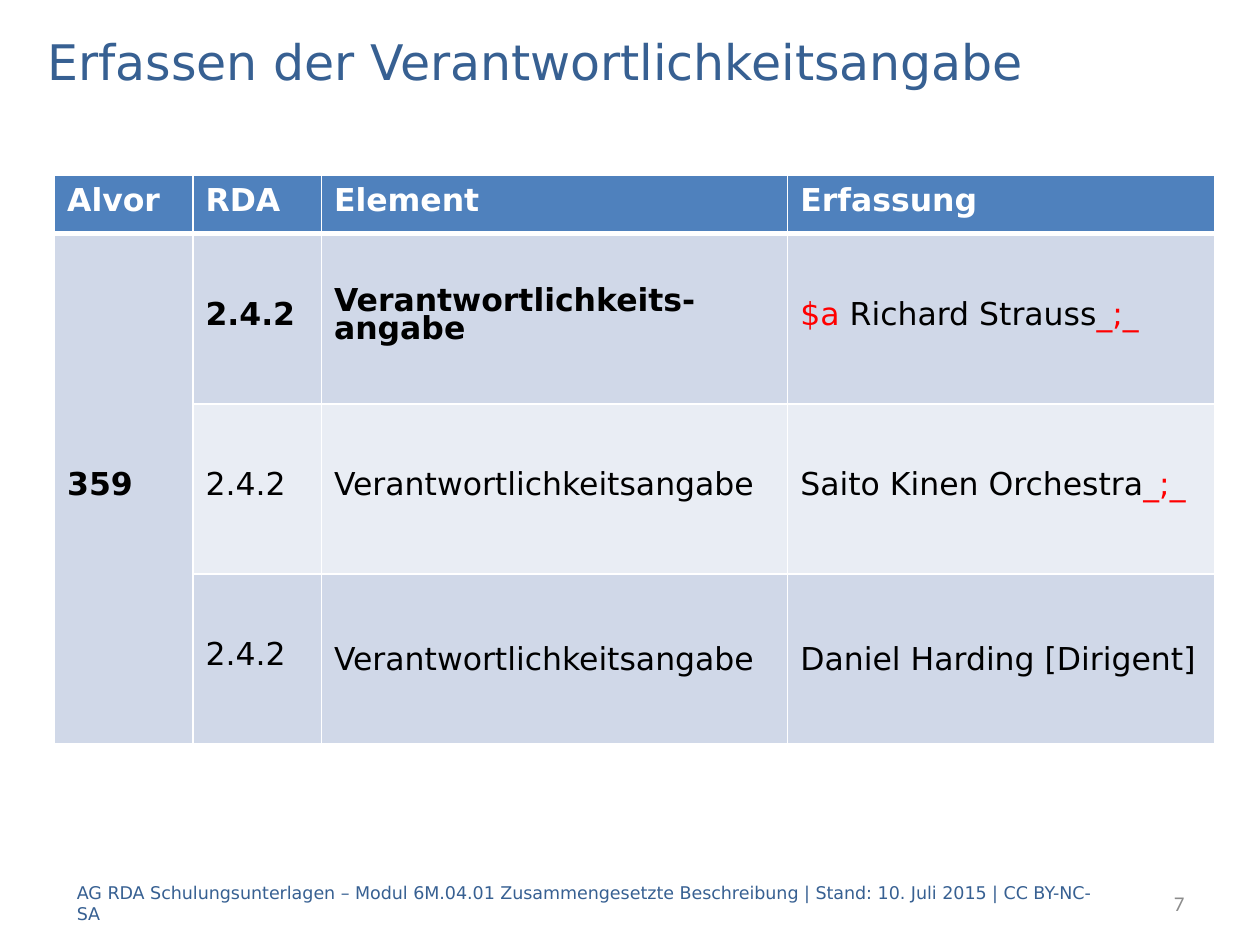
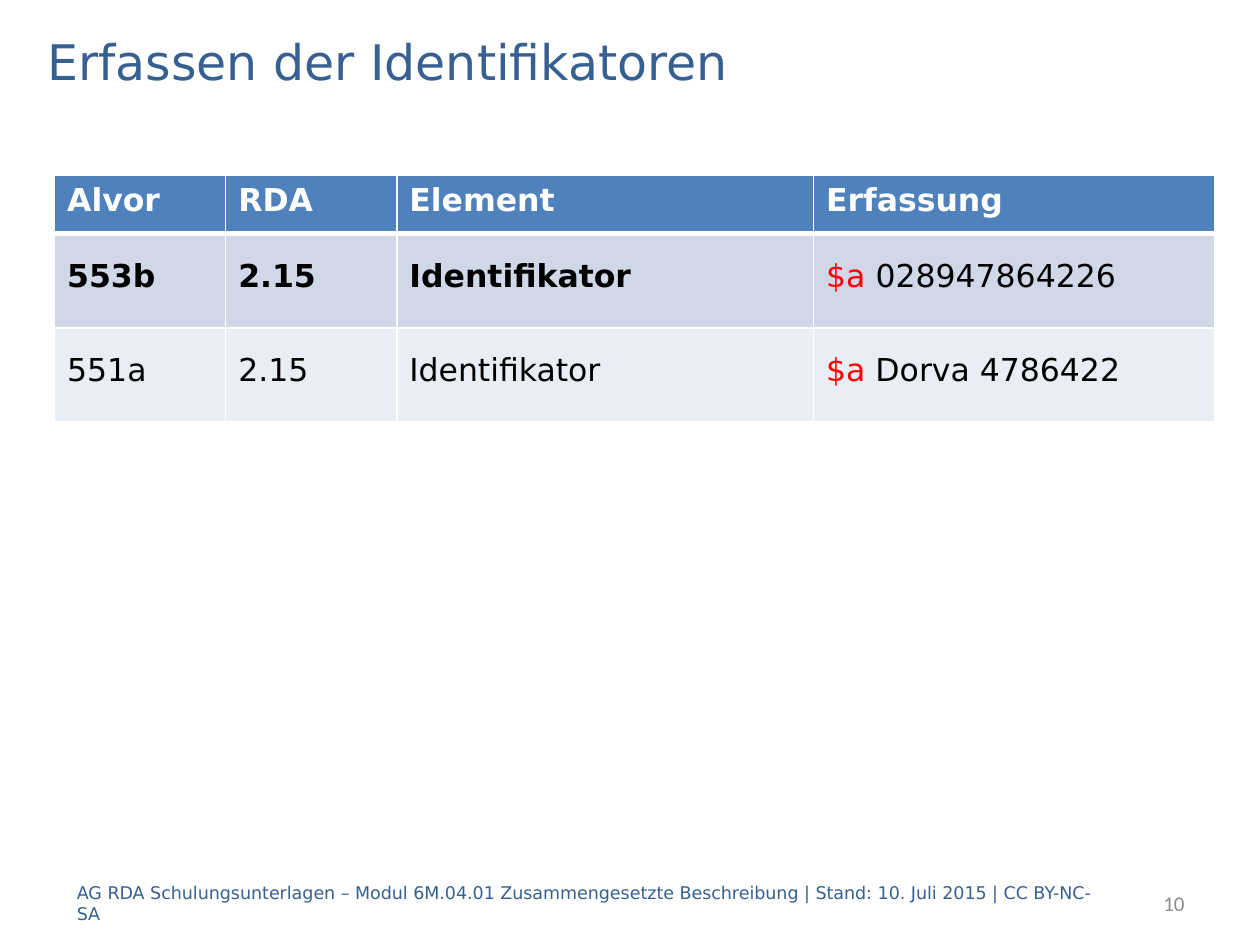
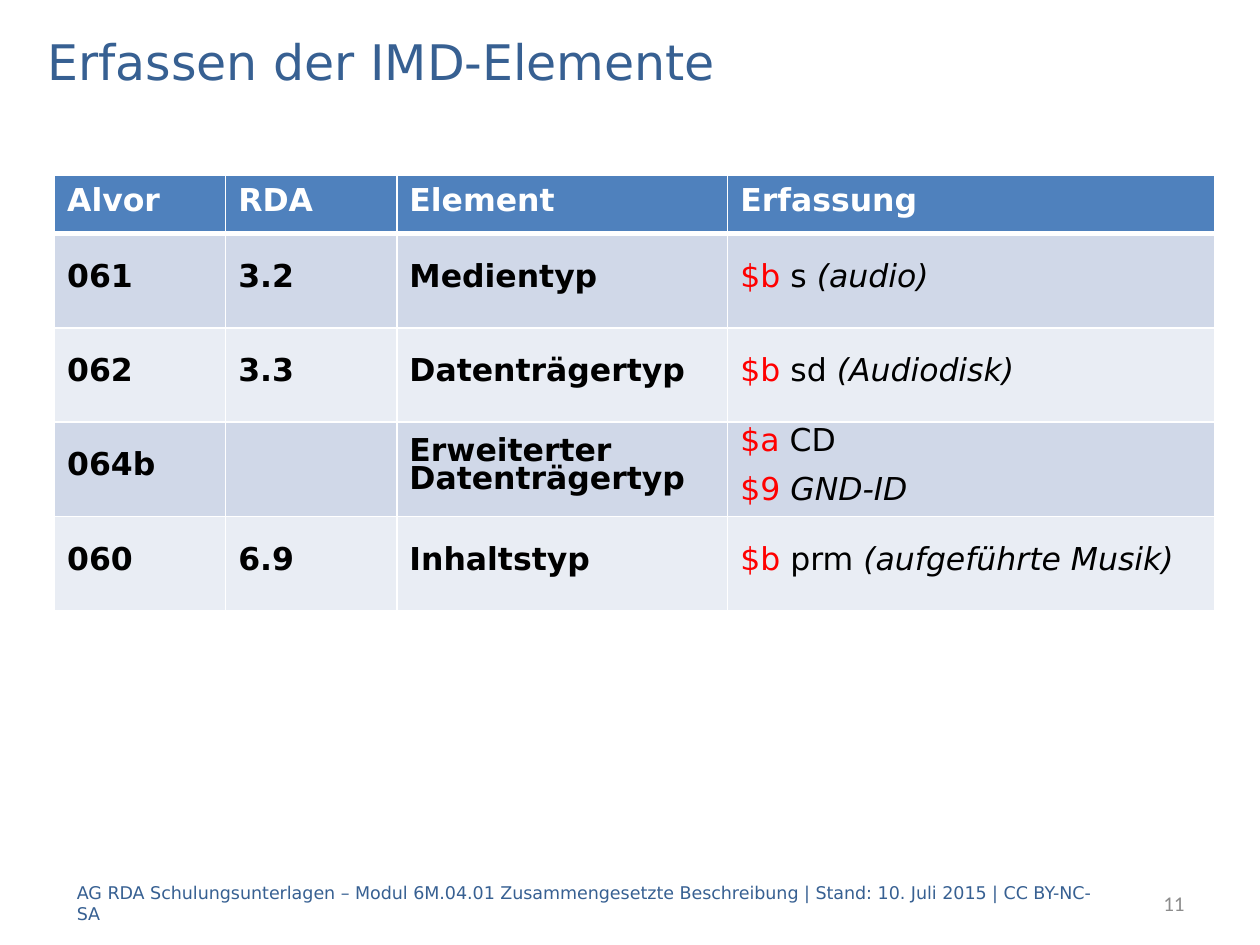
from dataclasses import dataclass

from lxml import etree
from pptx import Presentation
from pptx.dml.color import RGBColor
from pptx.enum.text import MSO_ANCHOR, PP_ALIGN
from pptx.oxml.ns import qn
from pptx.util import Cm, Pt

MIDDLE = MSO_ANCHOR.MIDDLE
LEFT, RIGHT = PP_ALIGN.LEFT, PP_ALIGN.RIGHT

FONT, NUMBER_FONT = "DejaVu Sans", "Calibri"
BLUE, GREY, WHITE, BLACK, RED = "376092", "8C8C8C", "FFFFFF", "000000", "FF0000"
HEADER_FILL = "4F81BD"
BAND_FILLS = ("D0D8E8", "E9EDF4")

# Boxes: left, top, width, height in cm
TITLE_BOX = (0.71, 0.51, 24, 1.42)
FOOTER_BOX = (1.3, 17.7, 21.21, 1.02)
NUMBER_BOX = (20.09, 17.7, 4.04, 1.02)
TABLE_LEFT, TABLE_TOP = 1.1, 3.54
HEADER_HEIGHT = 1.17
LOWERED_MARGIN = 0.33

FOOTER = ("AG RDA Schulungsunterlagen – Modul 6M.04.01 Zusammengesetzte "
          "Beschreibung | Stand: 10. Juli 2015 | CC BY-NC-SA")
HEADINGS = ("Alvor", "RDA", "Element", "Erfassung")


@dataclass
class Part:
    """A stretch of cell text in one style."""
    text: str
    color: str = BLACK
    bold: bool = False
    italic: bool = False


def plain(text):
    return [[Part(text)]]


def bold(text):
    return [[Part(text, bold=True)]]


def code(text):
    return Part(text, RED)


def note(text):
    return Part(text, italic=True)


def rgb(color):
    return RGBColor.from_string(color)


def style_run(run, size, color, font=FONT, is_bold=False, is_italic=False):
    run.font.name = font
    run.font.size = Pt(size)
    run.font.color.rgb = rgb(color)
    run.font.bold = is_bold
    run.font.italic = is_italic


def add_line(slide, box, text, size, color, font=FONT, align=LEFT):
    """Add a vertically centred text box with one paragraph."""
    frame = slide.shapes.add_textbox(*map(Cm, box)).text_frame
    frame.word_wrap = True
    frame.vertical_anchor = MIDDLE
    paragraph = frame.paragraphs[0]
    paragraph.text = text
    paragraph.alignment = align
    style_run(paragraph.runs[0], size, color, font)


def set_borders(cell, top=1, bottom=1):
    properties = cell._tc.get_or_add_tcPr()
    widths = {"a:lnL": 1, "a:lnR": 1, "a:lnT": top, "a:lnB": bottom}
    for index, (tag, width) in enumerate(widths.items()):
        line = etree.Element(qn(tag), w=str(Pt(width)))
        fill = etree.SubElement(line, qn("a:solidFill"))
        etree.SubElement(fill, qn("a:srgbClr"), val=WHITE)
        properties.insert(index, line)


def paint_cell(cell, fill, **borders):
    cell.fill.solid()
    cell.fill.fore_color.rgb = rgb(fill)
    set_borders(cell, **borders)


def fill_body_cell(cell, paragraphs):
    cell.vertical_anchor = MIDDLE
    frame = cell.text_frame
    for index, parts in enumerate(paragraphs):
        paragraph = frame.add_paragraph() if index else frame.paragraphs[0]
        paragraph.line_spacing = Pt(16)
        paragraph.space_before = paragraph.space_after = Pt(6)
        for part in parts:
            run = paragraph.add_run()
            run.text = part.text
            style_run(run, 18, part.color, is_bold=part.bold, is_italic=part.italic)


def add_field_table(slide, column_widths, row_height, rows):
    """Add the table of catalogue fields; a None cell continues the one above."""
    height = HEADER_HEIGHT + row_height * len(rows)
    box = (TABLE_LEFT, TABLE_TOP, sum(column_widths), height)
    table = slide.shapes.add_table(
        len(rows) + 1, len(HEADINGS), *map(Cm, box)).table
    for column, width in zip(table.columns, column_widths):
        column.width = Cm(width)
    for row in table.rows:
        row.height = Cm(row_height)
    table.rows[0].height = Cm(HEADER_HEIGHT)

    for column, heading in enumerate(HEADINGS):
        cell = table.cell(0, column)
        cell.text_frame.text = heading
        style_run(cell.text_frame.paragraphs[0].runs[0], 18, WHITE, is_bold=True)
        paint_cell(cell, HEADER_FILL, bottom=3)

    for number, row in enumerate(rows, 1):
        for column, content in enumerate(row):
            cell = table.cell(number, column)
            paint_cell(cell, BAND_FILLS[(number - 1) % 2],
                       top=3 if number == 1 else 1)
            if content is not None:
                fill_body_cell(cell, content)
    if rows[-1][0] is None:
        table.cell(1, 0).merge(table.cell(len(rows), 0))
    return table


def add_content_slide(deck, title, number):
    slide = deck.slides.add_slide(deck.slide_layouts[6])
    add_line(slide, NUMBER_BOX, number, 12, GREY, NUMBER_FONT, RIGHT)
    add_line(slide, TITLE_BOX, title, 28, BLUE)
    add_line(slide, FOOTER_BOX, FOOTER, 10, BLUE)
    return slide


def add_responsibility_slide(deck):
    slide = add_content_slide(deck, "Erfassen der Verantwortlichkeitsangabe", "7")
    statement = plain("Verantwortlichkeitsangabe")
    table = add_field_table(slide, (2.79, 2.59, 9.4, 8.61), 3.43, [
        (bold("359"), bold("2.4.2"), bold("Verantwortlichkeits-angabe"),
         [[code("$a"), Part(" Richard Strauss"), code("_;_")]]),
        (None, plain("2.4.2"), statement,
         [[Part("Saito Kinen Orchestra"), code("_;_")]]),
        (None, plain("2.4.2"), statement, plain("Daniel Harding [Dirigent]")),
    ])
    for column in (2, 3):
        table.cell(3, column).margin_top = Cm(LOWERED_MARGIN)


def add_identifier_slide(deck):
    slide = add_content_slide(deck, "Erfassen der Identifikatoren", "10")
    add_field_table(slide, (3.45, 3.45, 8.4, 8.09), 1.9, [
        (bold("553b"), bold("2.15"), bold("Identifikator"),
         [[code("$a "), Part("028947864226")]]),
        (plain("551a"), plain("2.15"), plain("Identifikator"),
         [[code("$a"), Part(" Dorva 4786422")]]),
    ])


def add_media_slide(deck):
    slide = add_content_slide(deck, "Erfassen der IMD-Elemente", "11")
    add_field_table(slide, (3.45, 3.45, 6.67, 9.82), 1.9, [
        (bold("061"), bold("3.2"), bold("Medientyp"),
         [[code("$b"), Part(" s "), note("(audio)")]]),
        (bold("062"), bold("3.3"), bold("Datenträgertyp"),
         [[code("$b "), Part("sd "), note("(Audiodisk)")]]),
        (bold("064b"), [], bold("Erweiterter Datenträgertyp"),
         [[code("$a"), Part(" CD")], [code("$9 "), note("GND-ID")]]),
        (bold("060"), bold("6.9"), bold("Inhaltstyp"),
         [[code("$b "), Part("prm "), note("(aufgeführte Musik)")]]),
    ])


def main():
    deck = Presentation()
    deck.slide_width, deck.slide_height = Cm(25.4), Cm(19.05)
    add_responsibility_slide(deck)
    add_identifier_slide(deck)
    add_media_slide(deck)
    deck.save("out.pptx")


if __name__ == "__main__":
    main()
